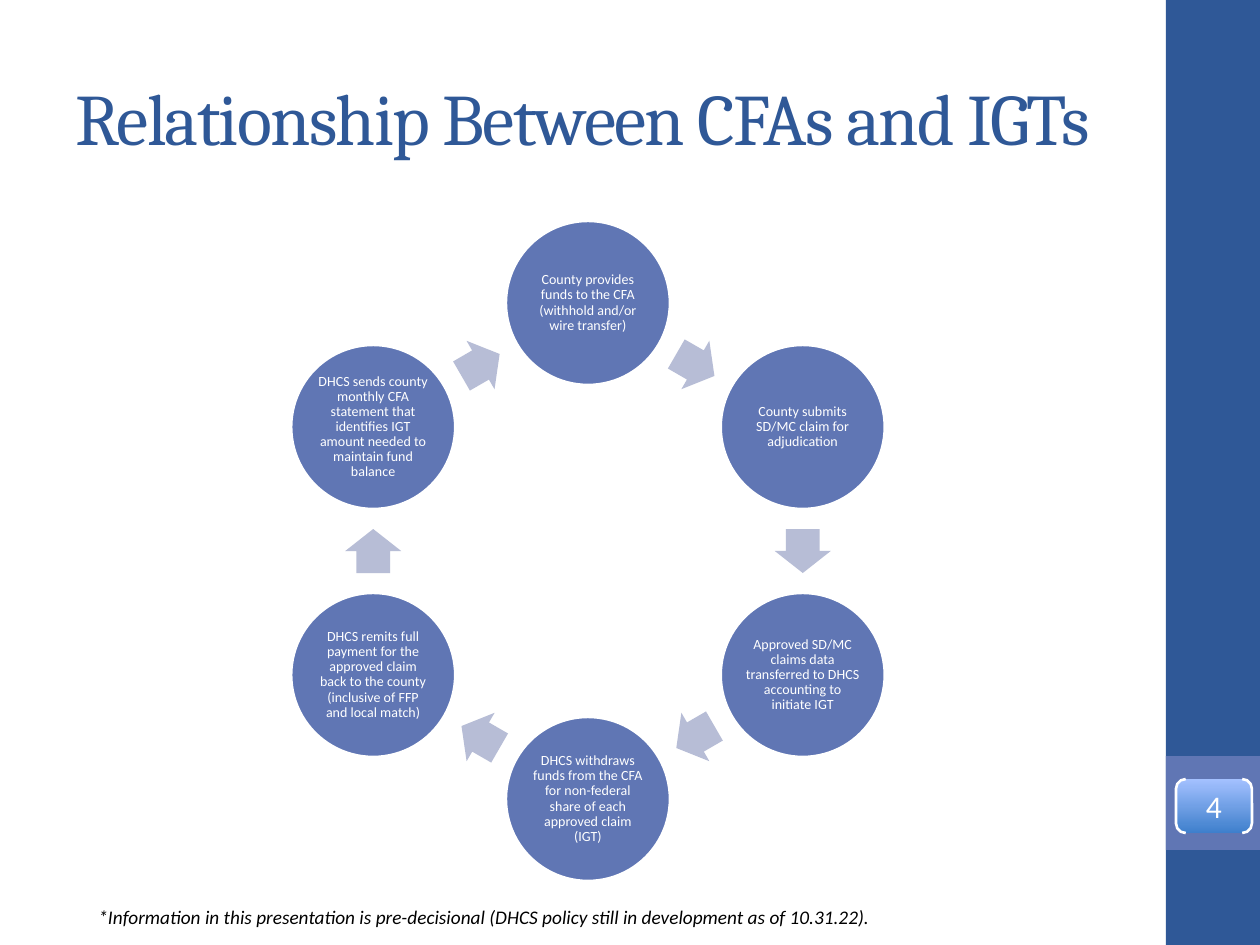
"""Build a slide showing the cycle between CFAs and IGTs."""
import math

import pptx
import pptx.dml.color
import pptx.enum.shapes
import pptx.enum.text
import pptx.util

KIND = pptx.enum.shapes.MSO_SHAPE
MID = pptx.enum.text.MSO_ANCHOR.MIDDLE
CENTER = pptx.enum.text.PP_ALIGN.CENTER
SCALE = 914400 / 126
NAVY, BLUE, PALE, WHITE = "2F5897", "6076B4", "B7BDD6", "FFFFFF"


def color(code):
    return pptx.dml.color.RGBColor.from_string(code)


def place(make, box, fill=None, text="", size=8, ink=WHITE, face="Calibri", inset=1):
    item = make(*[pptx.util.Emu(round(n * SCALE)) for n in box])
    if fill:
        item.fill.solid()
        item.fill.fore_color.rgb = color(fill)
    if hasattr(item, "adjustments"):
        item.shadow.inherit = False
        item.line.fill.background()
    if text:
        frame = item.text_frame
        frame.word_wrap = True
        frame.vertical_anchor = MID
        if inset is not None:
            gap = pptx.util.Emu(round(inset * SCALE))
            frame.margin_left = frame.margin_right = gap
            frame.margin_top = frame.margin_bottom = gap
        para = frame.paragraphs[0]
        para.text = text
        para.font.size = pptx.util.Pt(size)
        para.font.name = face
        para.font.color.rgb = color(ink)
    return item


deck = pptx.Presentation()
deck.slide_width = pptx.util.Emu(round(1260 * SCALE))
deck.slide_height = pptx.util.Emu(round(945 * SCALE))
slide = deck.slides.add_slide(deck.slide_layouts[6])
shapes = slide.shapes

for box, fill in [((1166, 0, 94, 945), NAVY), ((1166, 756, 94, 94), BLUE)]:
    place(lambda *at: shapes.add_shape(KIND.RECTANGLE, *at), box, fill)

note = place(shapes.add_textbox, (86, 898, 1041, 37), None,
             "*Information in this presentation is pre-decisional "
             "(DHCS policy still in development as of 10.31.22).",
             11, "000000", inset=None)
note.text_frame.paragraphs[0].font.italic = True

title = place(shapes.add_textbox, (63, 38, 1050, 157), None,
              "Relationship Between CFAs and IGTs", 41.4, NAVY, "Cambria", None)
title.text_frame.paragraphs[0].runs[0]._r.get_or_add_rPr().set("spc", "-100")

steps = [
    "County provides funds to the CFA (withhold and/or wire transfer)",
    "County submits SD/MC claim for adjudication",
    "Approved SD/MC claims data transferred to DHCS accounting to initiate IGT",
    "DHCS withdraws funds from the CFA for non-federal share of each approved claim (IGT)",
    "DHCS remits full payment for the approved claim back to the county "
    "(inclusive of FFP and local match)",
    "DHCS sends county monthly CFA statement that identifies IGT amount needed to "
    "maintain fund balance",
]
mid_x, mid_y, radius, disc = 588, 551, 248, 165
wide, high = 44, 56
turn = 360 / len(steps)
reach = radius * math.cos(math.radians(turn / 2))

for i, step in enumerate(steps):
    angle = math.radians(i * turn)
    x = mid_x + radius * math.sin(angle)
    y = mid_y - radius * math.cos(angle)
    node = place(lambda *at: shapes.add_shape(KIND.OVAL, *at),
                 (x - disc / 2, y - disc / 2, disc, disc), BLUE, step)
    node.line.color.rgb = color(WHITE)
    node.line.width = pptx.util.Pt(2)
    para = node.text_frame.paragraphs[0]
    para.alignment = CENTER
    para.line_spacing = 0.9

    angle = math.radians((i + 0.5) * turn)
    x = mid_x + reach * math.sin(angle)
    y = mid_y - reach * math.cos(angle)
    arrow = place(lambda *at: shapes.add_shape(KIND.RIGHT_ARROW, *at),
                  (x - wide / 2, y - high / 2, wide, high), PALE)
    arrow.adjustments[0] = 0.6
    arrow.adjustments[1] = 0.5
    arrow.rotation = (i + 0.5) * turn

page = place(lambda *at: shapes.add_shape(KIND.DOUBLE_BRACKET, *at),
             (1176, 779, 76, 54), None, "4", 18, inset=0)
page.adjustments[0] = 0.18
page.line.color.rgb = color(WHITE)
page.line.width = pptx.util.Pt(1.5)
page.text_frame.paragraphs[0].alignment = CENTER

deck.save("out.pptx")
